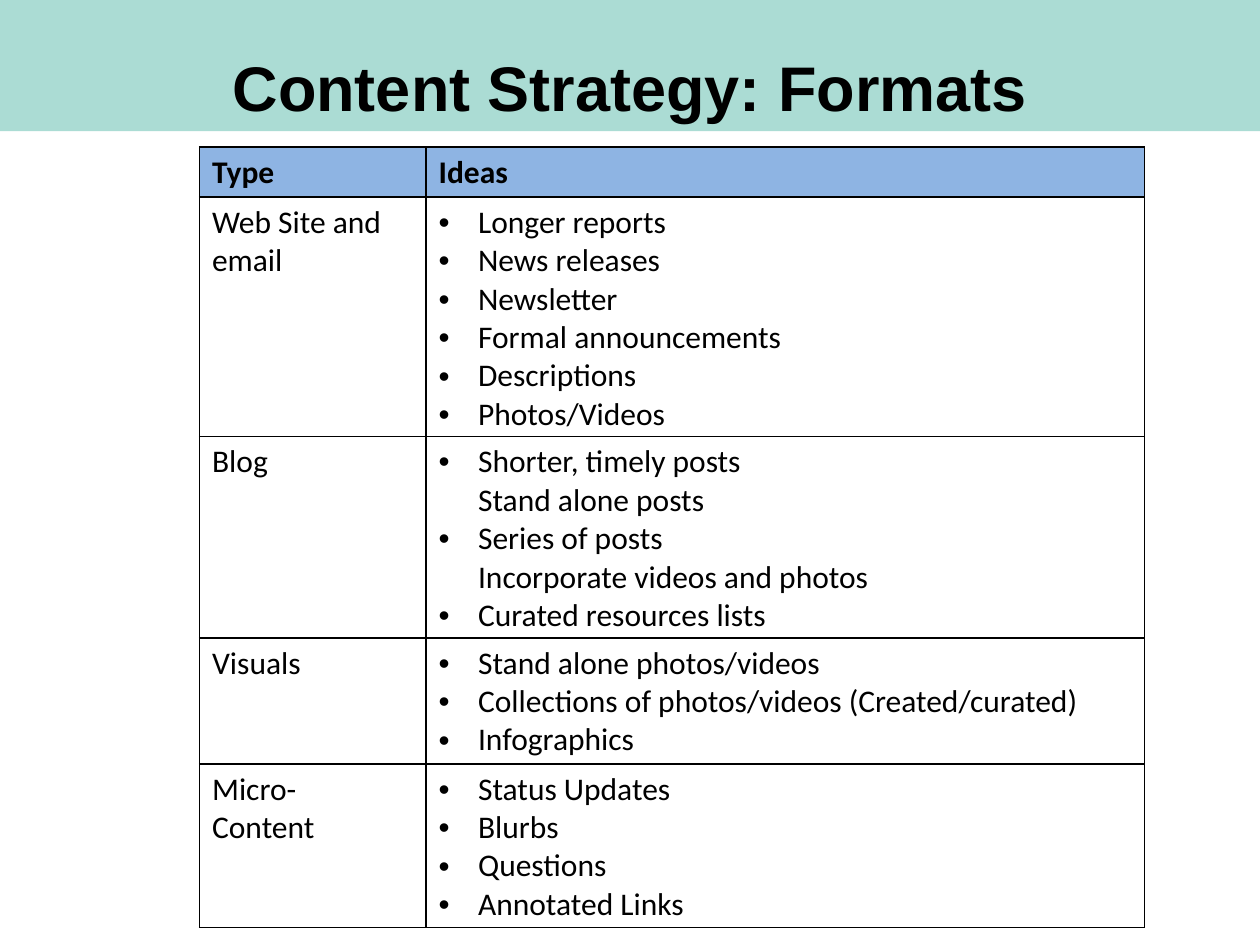
from lxml.etree import SubElement
from pptx import Presentation
from pptx.dml.color import RGBColor
from pptx.enum.shapes import MSO_SHAPE
from pptx.enum.text import MSO_ANCHOR, PP_ALIGN
from pptx.oxml.ns import qn
from pptx.util import Pt

COLORS = {"banner": "ABDCD4", "header": "8EB4E3", "text": "000000",
          "border": "000000"}

ROWS = [
    ("Type", ["Ideas"]),
    ("Web Site and email", ["Longer reports", "News releases", "Newsletter",
                            "Formal announcements", "Descriptions",
                            "Photos/Videos"]),
    ("Blog", ["Shorter, timely posts\vStand alone posts",
              "Series of posts\vIncorporate videos and photos",
              "Curated resources lists"]),
    ("Visuals", ["Stand alone photos/videos",
                 "Collections of photos/videos (Created/curated)",
                 "Infographics"]),
    ("Micro-\vContent", ["Status Updates", "Blurbs", "Questions",
                         "Annotated Links"]),
]
COL_WIDTHS = [129.5, 410.5]
ROW_HEIGHTS = [28.5, 137, 115, 72, 93.5]


def write(tf, lines, font="Calibri", size=18, bold=False,
          align=PP_ALIGN.LEFT, bullet=False):
    """Fill a text frame, one paragraph a line; \\v breaks a line."""
    for i, line in enumerate(lines):
        p = tf.add_paragraph() if i else tf.paragraphs[0]
        p.text = line
        p.alignment = align
        for r in p.runs:
            r.font.name = font
            r.font.size = Pt(size)
            r.font.bold = bold
            r.font.color.rgb = RGBColor.from_string(COLORS["text"])
        if bullet:
            pPr = p._p.get_or_add_pPr()
            pPr.set("marL", str(Pt(22.5)))
            pPr.set("indent", str(-Pt(22.5)))
            SubElement(pPr, qn("a:buFont"), typeface="Arial")
            SubElement(pPr, qn("a:buChar"), char="•")


def add_borders(cell):
    tcPr = cell._tc.get_or_add_tcPr()
    for i, side in enumerate(("lnL", "lnR", "lnT", "lnB")):
        ln = tcPr.makeelement(qn(f"a:{side}"), {"w": str(Pt(1))})
        fill = SubElement(ln, qn("a:solidFill"))
        SubElement(fill, qn("a:srgbClr"), val=COLORS["border"])
        tcPr.insert(i, ln)  # borders must precede the fill


prs = Presentation()
prs.slide_width, prs.slide_height = Pt(720), Pt(540)
s = prs.slides.add_slide(prs.slide_layouts[6])

# Title banner
sp = s.shapes.add_shape(MSO_SHAPE.RECTANGLE, 0, 0, Pt(720), Pt(75))
sp.shadow.inherit = False
sp.fill.solid()
sp.fill.fore_color.rgb = RGBColor.from_string(COLORS["banner"])
sp.line.fill.background()
tf = sp.text_frame
tf.word_wrap = True
tf.vertical_anchor = MSO_ANCHOR.TOP
tf.margin_top, tf.margin_bottom = Pt(27.5), 0
write(tf, ["Content Strategy: Formats"], font="Arial", size=36, bold=True,
      align=PP_ALIGN.CENTER)

# Formats table
table = s.shapes.add_table(len(ROWS), len(COL_WIDTHS), Pt(114), Pt(84),
                           Pt(sum(COL_WIDTHS)), Pt(sum(ROW_HEIGHTS))).table
table.horz_banding = False
for col, width in zip(table.columns, COL_WIDTHS):
    col.width = Pt(width)
for i, (kind, ideas) in enumerate(ROWS):
    table.rows[i].height = Pt(ROW_HEIGHTS[i])
    header = i == 0
    for j, lines in enumerate(([kind], ideas)):
        cell = table.cell(i, j)
        cell.margin_bottom = Pt(1)
        write(cell.text_frame, lines, bold=header,
              bullet=j == 1 and not header)
        if header:
            cell.fill.solid()
            cell.fill.fore_color.rgb = RGBColor.from_string(COLORS["header"])
        else:
            cell.fill.background()
        add_borders(cell)

prs.save("out.pptx")
